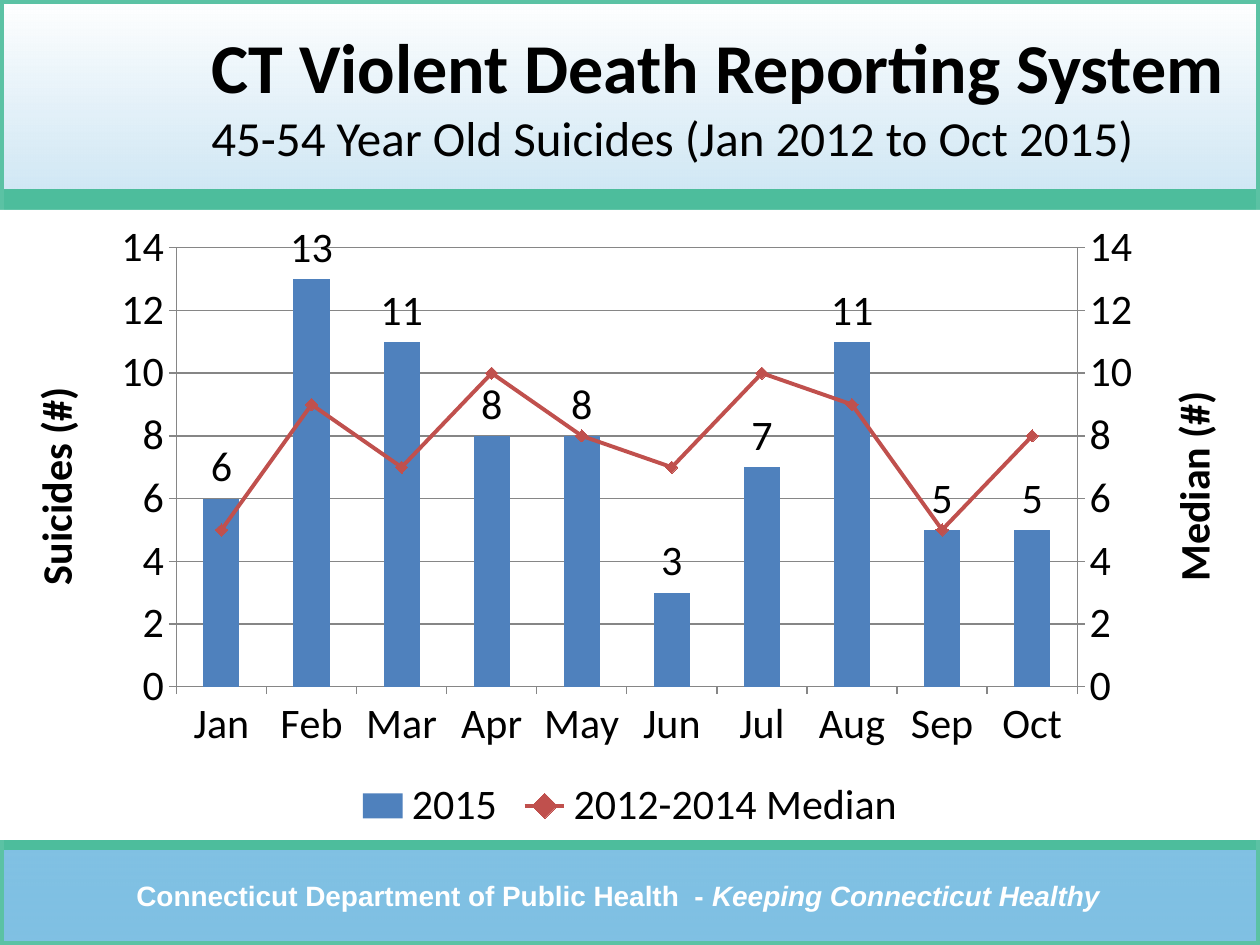
import copy

import lxml.etree
import pptx
import pptx.chart.axis
import pptx.chart.data
import pptx.dml.color
import pptx.enum.chart
import pptx.enum.shapes
import pptx.enum.text
import pptx.oxml
import pptx.oxml.ns
import pptx.util

EMU_PER_PX = 914400 / 126
WIDTH, HEIGHT = 1260, 945
GREEN, BLACK, WHITE, GREY = "4DBD9C", "000000", "FFFFFF", "868686"
MONTHS = ["Jan", "Feb", "Mar", "Apr", "May", "Jun", "Jul", "Aug", "Sep", "Oct"]
SUICIDES_2015 = [6, 13, 11, 8, 8, 3, 7, 11, 5, 5]
MEDIANS = [5, 9, 7, 10, 8, 7, 10, 9, 5, 8]


def px(length):
    return pptx.util.Emu(round(length * EMU_PER_PX))


def color(hex_string):
    return pptx.dml.color.RGBColor.from_string(hex_string)


def xml(tag, body):
    return pptx.oxml.parse_xml(
        f"<{tag} {pptx.oxml.ns.nsdecls('c', 'a')}>{body}</{tag}>")


def set_values(parent, **values):
    for name, value in values.items():
        parent.find(pptx.oxml.ns.qn(f"c:{name}")).set("val", value)


class SlideBuilder:
    heading_font = "Calibri"
    footer_font = "Arial"
    chart_size = 24

    def __init__(self, slide):
        self.slide = slide

    def rectangle(self, left, top, width, height, fill=None, line=None, line_pt=0):
        shape = self.slide.shapes.add_shape(
            pptx.enum.shapes.MSO_SHAPE.RECTANGLE,
            px(left), px(top), px(width), px(height))
        shape.shadow.inherit = False
        if fill:
            shape.fill.solid()
            shape.fill.fore_color.rgb = color(fill)
        else:
            shape.fill.background()
        if line:
            shape.line.color.rgb = color(line)
            shape.line.width = pptx.util.Pt(line_pt)
        else:
            shape.line.fill.background()
        return shape

    def backdrop(self, bottom, top, bottom_alpha):
        panel = self.rectangle(0, 0, WIDTH, HEIGHT)
        panel.fill.gradient()
        panel.fill.gradient_angle = 90
        for stop, shade in zip(panel.fill.gradient_stops, (bottom, top)):
            stop.color.rgb = color(shade)
        bottom_color = panel._element.xpath(".//a:gs/a:srgbClr")[0]
        alpha = lxml.etree.SubElement(bottom_color, pptx.oxml.ns.qn("a:alpha"))
        alpha.set("val", str(bottom_alpha * 1000))

    def text(self, left, top, width, height, align, right_inset=13):
        box = self.slide.shapes.add_textbox(px(left), px(top), px(width), px(height))
        frame = box.text_frame
        frame.word_wrap = True
        frame.margin_right = px(right_inset)
        frame.vertical_anchor = pptx.enum.text.MSO_ANCHOR.MIDDLE
        frame.paragraphs[0].alignment = align
        return frame.paragraphs[0]

    def run(self, paragraph, words, size, font, shade, bold=False, italic=False):
        run = paragraph.add_run()
        run.text = words
        run.font.size = pptx.util.Pt(size)
        run.font.name = font
        run.font.color.rgb = color(shade)
        run.font.bold = bold
        run.font.italic = italic

    def axis_title(self, axis, words):
        frame = axis.axis_title.text_frame
        frame.clear()
        self.run(frame.paragraphs[0], words, self.chart_size, self.heading_font,
                 BLACK, bold=True)
        orientation = frame._txBody.find(pptx.oxml.ns.qn("a:bodyPr"))
        orientation.set("rot", "-5400000")
        orientation.set("vert", "horz")

    def style_axis(self, axis):
        axis.major_tick_mark = pptx.enum.chart.XL_TICK_MARK.OUTSIDE
        axis.minor_tick_mark = pptx.enum.chart.XL_TICK_MARK.NONE
        self.grey_line(axis.format.line)

    def grey_line(self, line):
        line.color.rgb = color(GREY)
        line.width = pptx.util.Pt(0.75)

    def median_line(self, chart, shade):
        median = chart.plots[0].series[1]._element
        for flag in median.xpath("c:invertIfNegative"):
            median.remove(flag)
        months_axis, counts_axis = chart.category_axis._element, chart.value_axis._element
        line_chart = xml("c:lineChart", '<c:grouping val="standard"/>'
                         '<c:varyColors val="0"/><c:marker val="1"/>'
                         '<c:axId val="3001"/><c:axId val="3002"/>')
        line_chart.insert(2, median)
        chart.plots[0]._element.addnext(line_chart)

        hidden_months = copy.deepcopy(months_axis)
        set_values(hidden_months, axId="3001", crossAx="3002", delete="1")
        right_counts = copy.deepcopy(counts_axis)
        set_values(right_counts, axId="3002", crossAx="3001", axPos="r", crosses="max")
        counts_axis.addnext(right_counts)
        right_counts.addnext(hidden_months)
        right_axis = pptx.chart.axis.ValueAxis(right_counts)
        right_axis.has_major_gridlines = False
        self.axis_title(right_axis, "Median (#)")

        series = chart.plots[1].series[0]
        series.smooth = False
        series.format.line.color.rgb = color(shade)
        series.format.line.width = pptx.util.Pt(2.25)
        series.marker.style = pptx.enum.chart.XL_MARKER_STYLE.DIAMOND
        series.marker.size = 7
        series.marker.format.fill.solid()
        series.marker.format.fill.fore_color.rgb = color(shade)
        series.marker.format.line.color.rgb = color(shade)

    def combined_chart(self, left, top, width, height):
        data = pptx.chart.data.CategoryChartData()
        data.categories = MONTHS
        data.add_series("2015", SUICIDES_2015)
        data.add_series("2012-2014 Median", MEDIANS)
        chart = self.slide.shapes.add_chart(
            pptx.enum.chart.XL_CHART_TYPE.COLUMN_CLUSTERED,
            px(left), px(top), px(width), px(height), data).chart
        chart.has_title = False
        chart.font.name = self.heading_font
        chart.font.size = pptx.util.Pt(self.chart_size)
        chart.font.color.rgb = color(BLACK)
        chart.has_legend = True
        chart.legend.position = pptx.enum.chart.XL_LEGEND_POSITION.BOTTOM
        chart.legend.include_in_layout = False

        columns = chart.plots[0]
        columns.gap_width = 150
        columns.vary_by_categories = False
        suicides = columns.series[0]
        suicides.format.fill.solid()
        suicides.format.fill.fore_color.rgb = color("4F81BD")
        labels = suicides.data_labels
        labels.show_value = True
        labels.position = pptx.enum.chart.XL_LABEL_POSITION.OUTSIDE_END

        counts = chart.value_axis
        counts.minimum_scale, counts.maximum_scale, counts.major_unit = 0, 14, 2
        counts.has_major_gridlines = True
        self.grey_line(counts.major_gridlines.format.line)
        for axis in (chart.category_axis, counts):
            self.style_axis(axis)
        self.axis_title(counts, "Suicides (#)")
        self.median_line(chart, "C0504D")

        plot_area = chart._chartSpace.xpath("c:chart/c:plotArea")[0]
        for layout in plot_area.xpath("c:layout"):
            plot_area.remove(layout)
        plot_area.insert(0, xml(
            "c:layout", '<c:manualLayout><c:layoutTarget val="inner"/>'
            '<c:xMode val="edge"/><c:yMode val="edge"/><c:x val="0.14"/>'
            '<c:y val="0.06"/><c:w val="0.715"/><c:h val="0.697"/></c:manualLayout>'))
        chart._chartSpace.xpath("c:chart")[0].addnext(xml(
            "c:spPr", f'<a:solidFill><a:srgbClr val="{WHITE}"/></a:solidFill>'
            '<a:ln><a:noFill/></a:ln>'))


def main():
    deck = pptx.Presentation()
    deck.slide_width, deck.slide_height = px(WIDTH), px(HEIGHT)
    page = SlideBuilder(deck.slides.add_slide(deck.slide_layouts[6]))
    align = pptx.enum.text.PP_ALIGN

    page.backdrop("0082C8", WHITE, 50)
    page.rectangle(0, 840, WIDTH, 10, fill=GREEN)
    footer = page.text(73, 872, 1113, 47, align.CENTER, right_inset=35)
    page.run(footer, "Connecticut Department of Public Health  - ", 16,
             page.footer_font, WHITE, bold=True)
    page.run(footer, "Keeping Connecticut Healthy", 16,
             page.footer_font, WHITE, bold=True, italic=True)
    page.rectangle(0, 189, WIDTH, 21, fill=GREEN)
    page.rectangle(0, 0, WIDTH, HEIGHT, line="5BC2A4", line_pt=4.5)

    title = page.text(199, 0, 1050, 189, align.LEFT)
    page.run(title, "CT Violent Death Reporting System", 40,
             page.heading_font, BLACK, bold=True)
    title.add_line_break()
    page.run(title, "45-54 Year Old Suicides (Jan 2012 to Oct 2015)", 28,
             page.heading_font, BLACK)
    page.combined_chart(0, 210, WIDTH, 630)
    deck.save("out.pptx")


if __name__ == "__main__":
    main()
